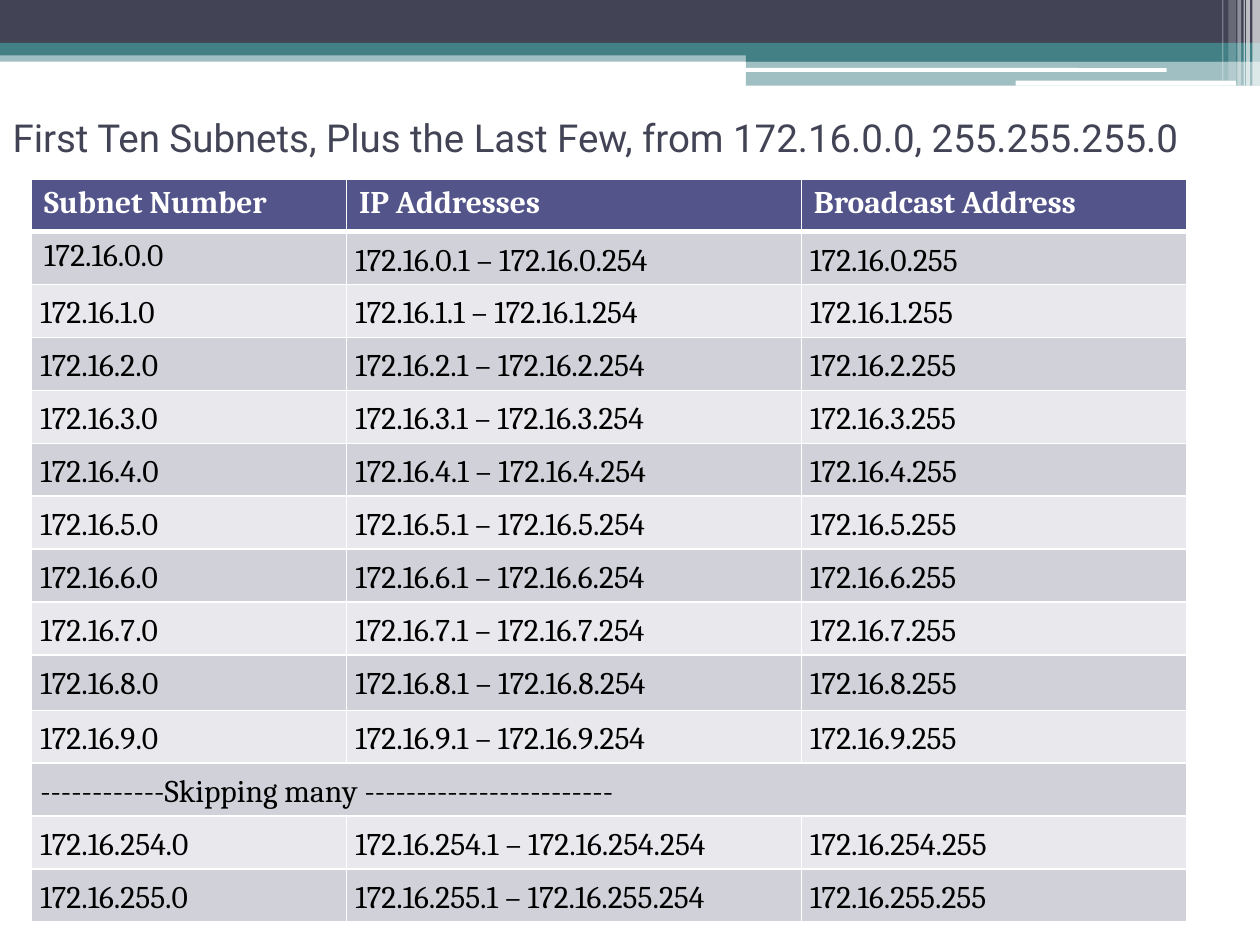
"""Build a slide that lists the subnets of 172.16.0.0 with mask 255.255.255.0."""
from dataclasses import dataclass

from lxml import etree
from pptx import Presentation
from pptx import util as u
from pptx.dml.color import RGBColor
from pptx.enum import shapes, text
from pptx.oxml.ns import qn

SLIDE_WIDTH, SLIDE_HEIGHT = u.Inches(10), u.Inches(7.5)
GRID_COLUMNS, GRID_ROWS = 1000, 750

WHITE = RGBColor(0xFF, 0xFF, 0xFF)
BLACK = RGBColor(0x00, 0x00, 0x00)
SLATE = RGBColor(0x42, 0x44, 0x56)
TEAL = RGBColor(0x43, 0x80, 0x86)
INDIGO = RGBColor(0x53, 0x54, 0x8A)
BAND_DARK = RGBColor(0xD1, 0xD1, 0xDA)
BAND_LIGHT = RGBColor(0xE9, 0xE9, 0xED)

TITLE = "First Ten Subnets, Plus the Last Few, from 172.16.0.0, 255.255.255.0"
HEADINGS = ("Subnet Number", "IP Addresses", "Broadcast Address")
SKIP_NOTE = "------------Skipping many ------------------------"
FIRST_SUBNETS, LAST_SUBNETS = range(10), (254, 255)
COLUMN_WIDTHS = (250, 361, 306)
ROW_HEIGHT, TALL_ROW_HEIGHT, TALL_ROW = 42, 44, 9


@dataclass(frozen=True)
class Band:
    """A plain bar of the page header, placed in grid units."""

    left: int
    top: int
    width: int
    height: int
    color: RGBColor
    opacity: int = 100
    rounded: bool = False


@dataclass(frozen=True)
class CellStyle:
    """The look of one kind of table cell."""

    color: RGBColor
    bold: bool = False
    bottom_line: float = 1
    low_text: bool = False


HEADING_STYLE = CellStyle(WHITE, bold=True, bottom_line=3)
FIRST_STYLE = CellStyle(BLACK)
BODY_STYLE = CellStyle(BLACK, low_text=True)

HEADER_BANDS = (
    Band(0, 40, 1000, 9, TEAL, 50),
    Band(0, 0, 1000, 34, SLATE),
    Band(0, 34, 1000, 10, TEAL),
    Band(592, 39, 408, 10, TEAL),
    Band(592, 48, 408, 20, TEAL, 50),
    Band(591, 54, 335, 3, WHITE, rounded=True),
    Band(806, 64, 175, 4, WHITE, rounded=True),
    Band(994, 0, 6, 68, WHITE, 65),
    Band(989, 0, 3, 68, WHITE, 65),
    Band(987, 0, 1, 68, WHITE, 60),
    Band(982, 0, 3, 68, WHITE, 40),
    Band(975, 0, 6, 64, WHITE, 20),
    Band(970, 0, 1, 64, WHITE, 30),
)


def across(columns: int) -> u.Emu:
    """Return the width of a number of grid columns."""
    return u.Emu(SLIDE_WIDTH * columns // GRID_COLUMNS)


def down(rows: int) -> u.Emu:
    """Return the height of a number of grid rows."""
    return u.Emu(SLIDE_HEIGHT * rows // GRID_ROWS)


def add_run(paragraph, words: str, font: str, size: float, color: RGBColor, bold: bool = False) -> None:
    """Add one formatted run to a paragraph."""
    run = paragraph.add_run()
    run.text = words
    run.font.name = font
    run.font.size = u.Pt(size)
    run.font.bold = bold
    run.font.color.rgb = color


def draw_band(slide, band: Band) -> None:
    """Draw one header bar."""
    kind = shapes.MSO_SHAPE.ROUNDED_RECTANGLE if band.rounded else shapes.MSO_SHAPE.RECTANGLE
    bar = slide.shapes.add_shape(
        kind, across(band.left), down(band.top), across(band.width), down(band.height)
    )
    bar.shadow.inherit = False
    bar.line.fill.background()
    bar.fill.solid()
    bar.fill.fore_color.rgb = band.color
    if band.opacity < 100:
        tint = bar.fill._xPr.find(".//" + qn("a:srgbClr"))
        etree.SubElement(tint, qn("a:alpha"), val=str(band.opacity * 1000))


def draw_borders(cell, bottom_line: float) -> None:
    """Give a cell white borders."""
    properties = cell._tc.get_or_add_tcPr()
    for side, width in (("L", 1), ("R", 1), ("T", 1), ("B", bottom_line)):
        line = etree.SubElement(properties, qn(f"a:ln{side}"), w=str(u.Pt(width)))
        paint = etree.SubElement(line, qn("a:solidFill"))
        etree.SubElement(paint, qn("a:srgbClr"), val=str(WHITE))


def fill_cell(cell, words: str, background: RGBColor, style: CellStyle) -> None:
    """Write and format one table cell."""
    draw_borders(cell, style.bottom_line)
    cell.fill.solid()
    cell.fill.fore_color.rgb = background
    paragraph = cell.text_frame.paragraphs[0]
    if style.low_text:
        cell.margin_left = cell.margin_right = u.Inches(0.07)
        cell.margin_top, cell.margin_bottom = u.Pt(15), 0
        paragraph.line_spacing = u.Pt(12)
    if words:
        add_run(paragraph, words, "Cambria", 18, style.color, style.bold)


def subnet_row(number: int) -> tuple[str, str, str]:
    """Return the subnet number, host range and broadcast address."""
    prefix = f"172.16.{number}"
    return f"{prefix}.0", f"{prefix}.1 – {prefix}.254", f"{prefix}.255"


def draw_subnets(slide) -> None:
    """Draw the table of subnets."""
    rows = [
        HEADINGS,
        *map(subnet_row, FIRST_SUBNETS),
        (SKIP_NOTE, "", ""),
        *map(subnet_row, LAST_SUBNETS),
    ]
    subnets = slide.shapes.add_table(
        len(rows), len(HEADINGS), across(25), down(142),
        across(sum(COLUMN_WIDTHS)), down(ROW_HEIGHT * len(rows)),
    ).table
    for column, width in zip(subnets.columns, COLUMN_WIDTHS):
        column.width = across(width)
    for r, row in enumerate(rows):
        subnets.rows[r].height = down(TALL_ROW_HEIGHT if r == TALL_ROW else ROW_HEIGHT)
        background = INDIGO if r == 0 else BAND_DARK if r % 2 else BAND_LIGHT
        for c, words in enumerate(row):
            style = HEADING_STYLE if r == 0 else FIRST_STYLE if (r, c) == (1, 0) else BODY_STYLE
            fill_cell(subnets.cell(r, c), words, background, style)
    skip_row = len(FIRST_SUBNETS) + 1
    subnets.cell(skip_row, 0).merge(subnets.cell(skip_row, len(HEADINGS) - 1))


def write_title(slide) -> None:
    """Place and format the title placeholder."""
    title = slide.shapes.title
    title.left, title.top, title.width, title.height = 0, down(75), across(967), down(67)
    frame = title.text_frame
    frame.word_wrap = True
    frame.auto_size = text.MSO_AUTO_SIZE.NONE
    frame.vertical_anchor = text.MSO_ANCHOR.MIDDLE
    heading = frame.paragraphs[0]
    heading.alignment = text.PP_ALIGN.LEFT
    add_run(heading, TITLE, "Roboto", 22, SLATE)


def main() -> None:
    """Build and save the presentation."""
    deck = Presentation()
    deck.slide_width, deck.slide_height = SLIDE_WIDTH, SLIDE_HEIGHT
    slide = deck.slides.add_slide(deck.slide_layouts.get_by_name("Title Only"))
    for band in HEADER_BANDS:
        draw_band(slide, band)
    write_title(slide)
    draw_subnets(slide)
    deck.save("out.pptx")


if __name__ == "__main__":
    main()
